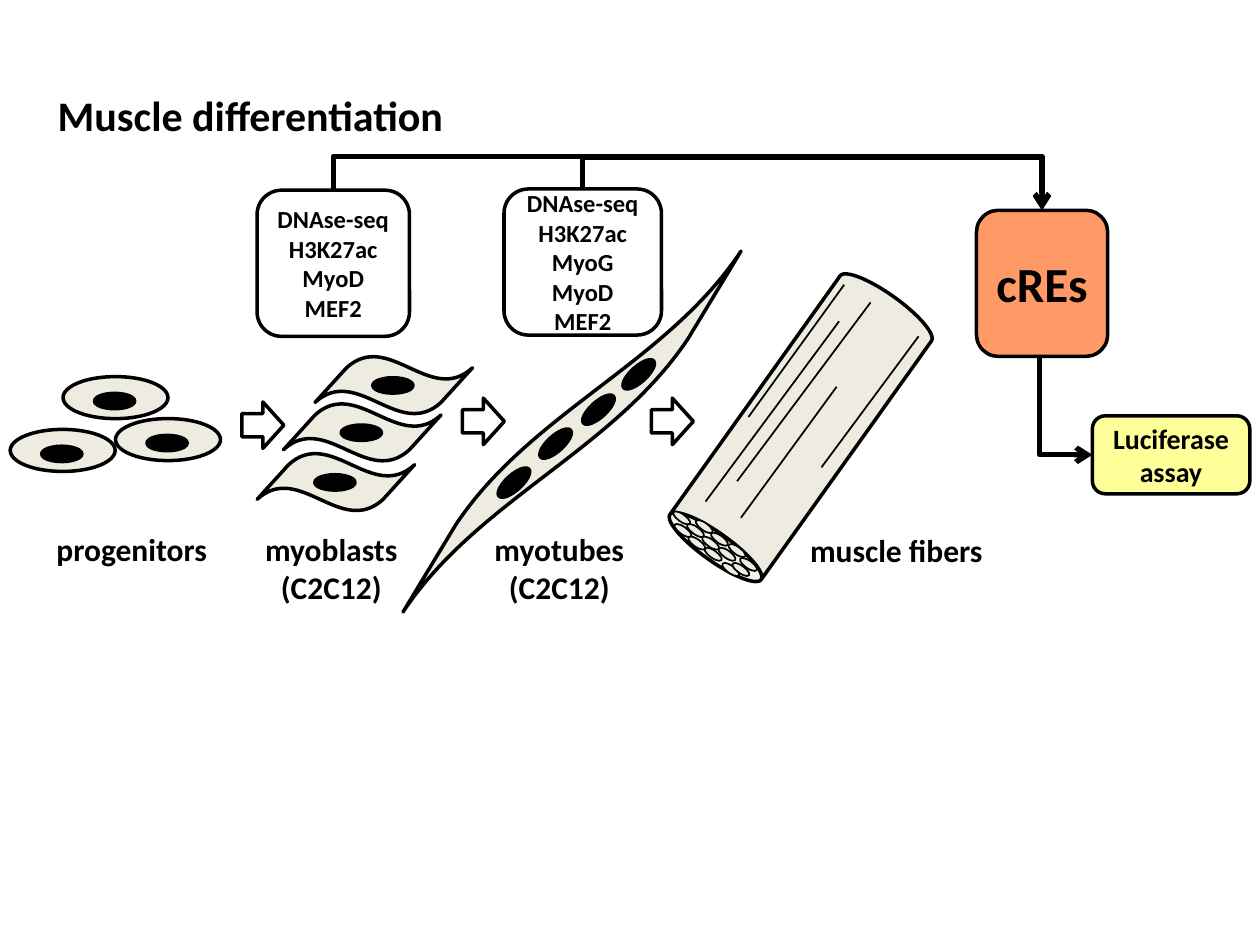
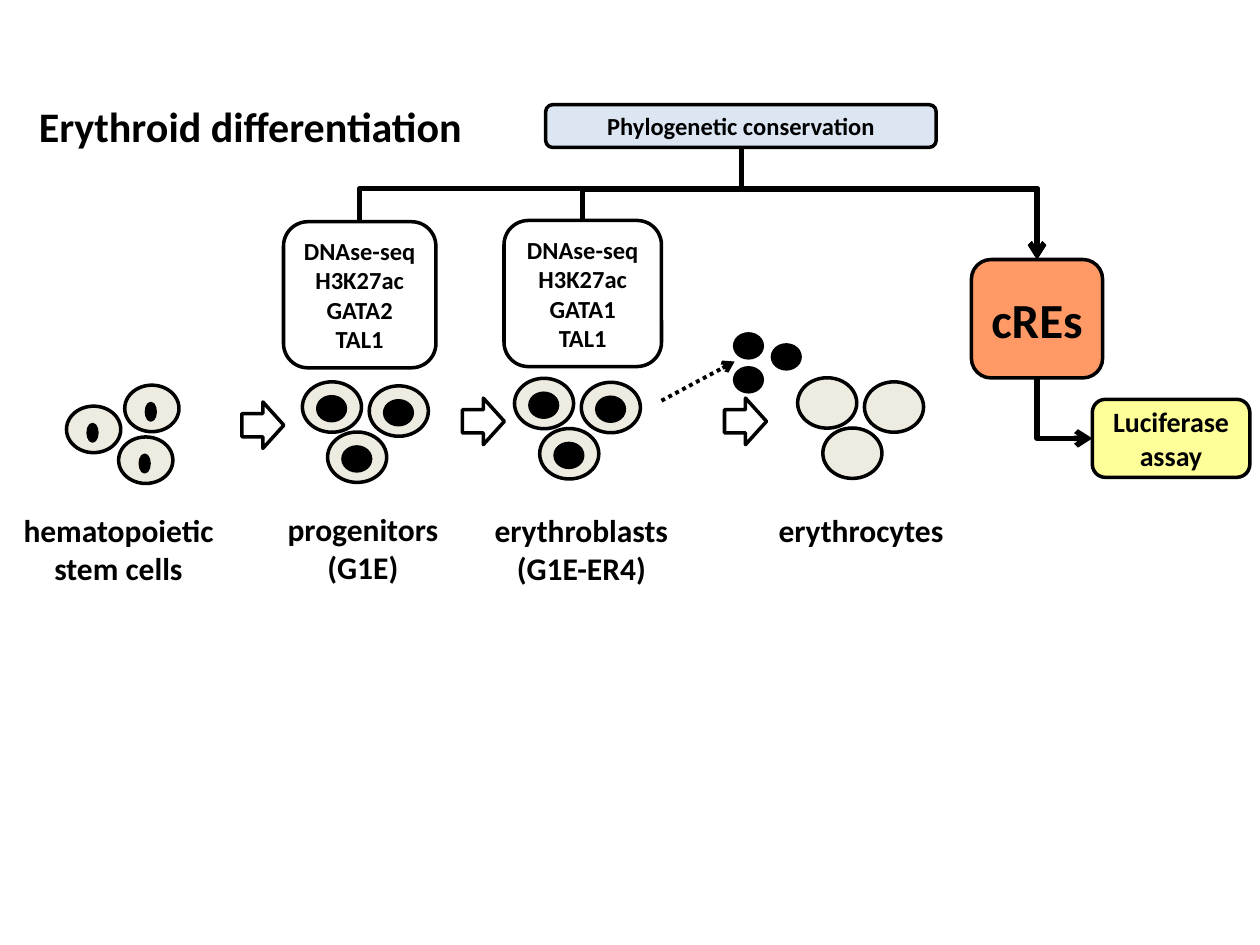
from dataclasses import dataclass
from typing import NamedTuple, Optional

from pptx import Presentation
from pptx.dml.color import RGBColor
from pptx.enum.dml import MSO_LINE
from pptx.enum.shapes import MSO_CONNECTOR, MSO_SHAPE
from pptx.enum.text import MSO_ANCHOR, MSO_AUTO_SIZE, PP_ALIGN
from pptx.oxml.ns import qn
from pptx.util import Pt
from lxml import etree

ELLIPSE, WAVE, CAN = MSO_SHAPE.OVAL, MSO_SHAPE.WAVE, MSO_SHAPE.CAN
ROUNDED, BLOCK_ARROW = MSO_SHAPE.ROUNDED_RECTANGLE, MSO_SHAPE.RIGHT_ARROW
STRAIGHT, ELBOW = MSO_CONNECTOR.STRAIGHT, MSO_CONNECTOR.ELBOW
LEFT, CENTER = PP_ALIGN.LEFT, PP_ALIGN.CENTER
MIDDLE, GROW = MSO_ANCHOR.MIDDLE, MSO_AUTO_SIZE.SHAPE_TO_FIT_TEXT
DOTTED = MSO_LINE.ROUND_DOT


@dataclass(frozen=True)
class Theme:
    font: str = "Calibri"
    ink: RGBColor = RGBColor(0x00, 0x00, 0x00)
    paper: RGBColor = RGBColor(0xFF, 0xFF, 0xFF)
    cell: RGBColor = RGBColor(0xEE, 0xEC, 0xE1)
    elements: RGBColor = RGBColor(0xFF, 0x99, 0x66)
    assay: RGBColor = RGBColor(0xFF, 0xFF, 0x99)
    conservation: RGBColor = RGBColor(0xDC, 0xE6, 0xF2)
    title: int = 24
    label: int = 18
    marker: int = 14
    assay_size: int = 16
    elements_size: int = 28
    thin: float = 1
    outline: float = 2
    dotted: float = 2.25
    route: float = 3


THEME = Theme()


class Point(NamedTuple):
    x: float
    y: float


class Area(NamedTuple):
    left: float
    top: float
    width: float
    height: float


class CellKind(NamedTuple):
    preset: MSO_SHAPE
    width: float
    height: float
    nucleus: Optional[Area]


class Label(NamedTuple):
    text: str
    area: Area
    align: PP_ALIGN = CENTER
    wrap: bool = False


class Box(NamedTuple):
    text: str
    area: Area
    size: int = THEME.marker
    fill: RGBColor = THEME.paper


class Route(NamedTuple):
    start: Point
    end: Point
    turn: Optional[float] = None


PROGENITOR = CellKind(ELLIPSE, 60, 24, Area(18, 9.6, 23, 8.8))
MYOBLAST = CellKind(WAVE, 90, 33, Area(33, 12.3, 23, 8.8))
STEM_CELL = CellKind(ELLIPSE, 31, 26.6, Area(12.4, 10.5, 5, 9.4))
ERYTHROBLAST = CellKind(ELLIPSE, 33.8, 28.8, Area(8.8, 8.5, 15.8, 13.7))
ERYTHROCYTE = CellKind(ELLIPSE, 33.8, 28.8, None)
CLUSTER = [Point(0, 0), Point(38.2, 2.3), Point(14.4, 28.7)]

FIBRILS = [
    Point(383.8, 293.8), Point(396.7, 298.8), Point(384.5, 301),
    Point(391.7, 301), Point(392.4, 308.2), Point(400.3, 308.2),
    Point(401.8, 314.6), Point(405.4, 306), Point(409.7, 314.6),
    Point(415.4, 312.5), Point(421.9, 320.4), Point(411.8, 323.3),
    Point(417.6, 323.3),
]
STRIATIONS = [
    (Point(403.2, 286.6), Point(479.5, 183.6)),
    (Point(421.2, 275), Point(497.5, 172.8)),
    (Point(427.7, 238.3), Point(482.4, 162.7)),
    (Point(423.4, 295.9), Point(478.1, 221)),
    (Point(469.4, 267.1), Point(524.9, 192.2)),
]
MYOTUBE_NUCLEI = [Point(282.2, 271.4), Point(306, 249.1),
                  Point(330.5, 229.7), Point(353.5, 209.5)]
EXPELLED_NUCLEI = [Point(419.8, 210.2), Point(441.4, 197.1),
                   Point(419.8, 190.8)]


def write_text(frame, text: str, *, size: float, align=CENTER,
               wrap: bool = True) -> None:
    frame.word_wrap = wrap
    for index, line in enumerate(text.split("\n")):
        para = frame.add_paragraph() if index else frame.paragraphs[0]
        para.alignment = align
        span = para.add_run()
        span.text = line
        span.font.name = THEME.font
        span.font.size = Pt(size)
        span.font.bold = True
        span.font.color.rgb = THEME.ink


def draw_shape(canvas, preset, area: Area, *, fill: Optional[RGBColor] = None,
               weight: float = THEME.outline, rotation: float = 0):
    shape = canvas.add_shape(preset, *map(Pt, area))
    shape.shadow.inherit = False
    shape.rotation = rotation
    if fill is None:
        shape.fill.background()
    else:
        shape.fill.solid()
        shape.fill.fore_color.rgb = fill
    shape.line.color.rgb = THEME.ink
    shape.line.width = Pt(weight)
    if preset == WAVE:
        shape.adjustments[0] = 0.2
        shape.adjustments[1] = -0.1
    return shape


def draw_nucleus(canvas, area: Area, rotation: float = 0) -> None:
    draw_shape(canvas, ELLIPSE, area, fill=THEME.ink, rotation=rotation)


def draw_cell(canvas, kind: CellKind, at: Point) -> None:
    draw_shape(canvas, kind.preset, Area(at.x, at.y, kind.width, kind.height),
               fill=THEME.cell)
    if kind.nucleus:
        inner = kind.nucleus
        draw_nucleus(canvas, Area(at.x + inner.left, at.y + inner.top,
                                  inner.width, inner.height))


def draw_cells(page, kind: CellKind, places: list[Point]) -> None:
    group = page.shapes.add_group_shape()
    for place in places:
        draw_cell(group.shapes, kind, place)


def draw_cluster(page, kind: CellKind, origin: Point) -> None:
    draw_cells(page, kind, [Point(origin.x + step.x, origin.y + step.y)
                            for step in CLUSTER])


def draw_line(canvas, start: Point, end: Point, *, kind=STRAIGHT,
              weight: float, dash=None, arrow: bool = False):
    line = canvas.add_connector(kind, *map(Pt, (*start, *end)))
    line.line.color.rgb = THEME.ink
    line.line.width = Pt(weight)
    if dash is not None:
        line.line.dash_style = dash
    properties = line._element.spPr
    if arrow:
        outline = properties.find(qn("a:ln"))
        etree.SubElement(outline, qn("a:tailEnd"), type="arrow")
    etree.SubElement(properties, qn("a:effectLst"))
    return line


def draw_route(page, route: Route) -> None:
    start, end = route.start, route.end
    line = draw_line(page.shapes, start, end, kind=ELBOW,
                     weight=THEME.route, arrow=True)
    across, down = end.x - start.x, end.y - start.y
    line.left = Pt((start.x + end.x - down) / 2)
    line.top = Pt((start.y + end.y - across) / 2)
    line.width, line.height = Pt(down), Pt(across)
    properties = line._element.spPr
    frame = properties.find(qn("a:xfrm"))
    frame.set("rot", str(270 * 60000))
    frame.set("flipH", "1")
    geometry = properties.find(qn("a:prstGeom"))
    if route.turn is None:
        geometry.set("prst", "bentConnector2")
    else:
        share = round((route.turn - start.y) / down * 100000)
        guides = geometry.find(qn("a:avLst"))
        etree.SubElement(guides, qn("a:gd"), name="adj1", fmla=f"val {share}")


def draw_label(page, label: Label, size: float = THEME.label) -> None:
    box = page.shapes.add_textbox(*map(Pt, label.area))
    write_text(box.text_frame, label.text, size=size, align=label.align,
               wrap=label.wrap)
    box.text_frame.auto_size = GROW


def draw_box(page, box: Box) -> None:
    shape = draw_shape(page.shapes, ROUNDED, box.area, fill=box.fill)
    shape.text_frame.vertical_anchor = MIDDLE
    write_text(shape.text_frame, box.text, size=box.size)


def draw_myotube(page) -> None:
    group = page.shapes.add_group_shape()
    draw_shape(group.shapes, WAVE, Area(185.8, 234, 282.2, 25.2),
               fill=THEME.cell, rotation=316.2)
    for place in MYOTUBE_NUCLEI:
        draw_nucleus(group.shapes, Area(*place, 23, 8.8), rotation=317.9)


def draw_muscle_fiber(page) -> None:
    group = page.shapes.add_group_shape()
    draw_shape(group.shapes, CAN, Area(425.5, 152.6, 64.1, 183.6),
               fill=THEME.cell, rotation=215.5)
    for place in FIBRILS:
        draw_shape(group.shapes, ELLIPSE, Area(*place, 11.5, 4.3),
                   fill=THEME.cell, weight=THEME.thin, rotation=35.2)
    for start, end in STRIATIONS:
        draw_line(group.shapes, start, end, weight=THEME.thin)


def add_page(deck, title: Label, labels: list[Label], boxes: list[Box],
             routes: list[Route], last_arrow: float):
    page = deck.slides.add_slide(deck.slide_layouts[6])
    page.background.fill.solid()
    page.background.fill.fore_color.rgb = THEME.paper
    draw_label(page, title, THEME.title)
    for place in (Point(138.2, 229.7), Point(264.2, 227.5),
                  Point(last_arrow, 227.5)):
        draw_shape(page.shapes, BLOCK_ARROW, Area(*place, 24, 26.6))
    for label in labels:
        draw_label(page, label)
    for box in boxes:
        draw_box(page, box)
    for route in routes:
        draw_route(page, route)
    return page


def elements_box(area: Area) -> Box:
    return Box("cREs", area, THEME.elements_size, THEME.elements)


def assay_box(top: float) -> Box:
    return Box("Luciferase assay", Area(624.2, top, 90, 44.6),
               THEME.assay_size, THEME.assay)


def add_muscle_page(deck) -> None:
    target = Point(595.4, 120.2)
    page = add_page(
        deck,
        Label("Muscle differentiation", Area(25.9, 47.5, 238.3, 36), LEFT),
        [Label("progenitors", Area(25.2, 299.5, 100.8, 28.8), LEFT),
         Label("myoblasts\n(C2C12)", Area(144, 299.5, 90.7, 51.1)),
         Label("myotubes\n(C2C12)", Area(275, 299.5, 89.3, 51.1)),
         Label("muscle fibers", Area(455.8, 300.2, 113.8, 28.8), LEFT)],
        [Box("DNAse-seq\nH3K27ac\nMyoD\nMEF2", Area(146.9, 108.7, 87.1, 83.5)),
         Box("DNAse-seq\nH3K27ac\nMyoG\nMyoD\nMEF2", Area(288, 108, 90, 83.5)),
         elements_box(Area(558, 120.2, 75, 83.5)),
         assay_box(237.6)],
        [Route(Point(333, 108), target, 89.8),
         Route(Point(190.5, 108.7), target, 89.5),
         Route(Point(594, 203.7), Point(624.2, 259.9))],
        372.2)
    draw_cells(page, PROGENITOR, [Point(36, 215.2), Point(5.8, 245.4),
                                  Point(66, 239.2)])
    draw_cells(page, MYOBLAST, [Point(162, 230.6), Point(180, 203.6),
                                Point(146.9, 259)])
    draw_myotube(page)
    draw_muscle_fiber(page)


def add_erythroid_page(deck) -> None:
    target = Point(592.6, 148.3)
    page = add_page(
        deck,
        Label("Erythroid differentiation", Area(15.1, 54, 259.9, 36), LEFT),
        [Label("hematopoietic stem cells", Area(-1.4, 288.7, 138.2, 51.1),
               wrap=True),
         Label("progenitors\n(G1E)", Area(157, 288, 100.8, 51.1)),
         Label("erythroblasts\n(G1E-ER4)", Area(275, 288.7, 114.5, 51.1)),
         Label("erythrocytes", Area(437.8, 288.7, 109.4, 28.8), LEFT)],
        [Box("DNAse-seq\nH3K27ac\nGATA2\nTAL1", Area(162, 126.7, 87.1, 83.5)),
         Box("DNAse-seq\nH3K27ac\nGATA1\nTAL1", Area(288, 126, 90, 83.5)),
         Box("Phylogenetic conservation", Area(311.8, 59.8, 223.2, 24.5),
             fill=THEME.conservation),
         elements_box(Area(555.1, 148.3, 75, 67.7)),
         assay_box(228.2)],
        [Route(Point(333, 126), target, 108),
         Route(Point(205.5, 126.7), target, 107.6),
         Route(Point(423.8, 84.3), target, 108.4),
         Route(Point(592.6, 216), Point(624.2, 250.5))],
        414)
    draw_cells(page, STEM_CELL, [Point(71.3, 220.1), Point(38, 232.1),
                                 Point(67.8, 249.7)])
    draw_cluster(page, ERYTHROBLAST, Point(172.8, 218.2))
    draw_cluster(page, ERYTHROBLAST, Point(294, 216.2))
    draw_cluster(page, ERYTHROCYTE, Point(455.8, 215.9))
    for place in EXPELLED_NUCLEI:
        draw_nucleus(page.shapes, Area(*place, 15.8, 13.7))
    draw_line(page.shapes, Point(378, 229), Point(419.8, 206.6),
              weight=THEME.dotted, dash=DOTTED, arrow=True)


def main() -> None:
    deck = Presentation()
    deck.slide_width, deck.slide_height = Pt(720), Pt(540)
    add_muscle_page(deck)
    add_erythroid_page(deck)
    deck.save("out.pptx")


if __name__ == "__main__":
    main()
